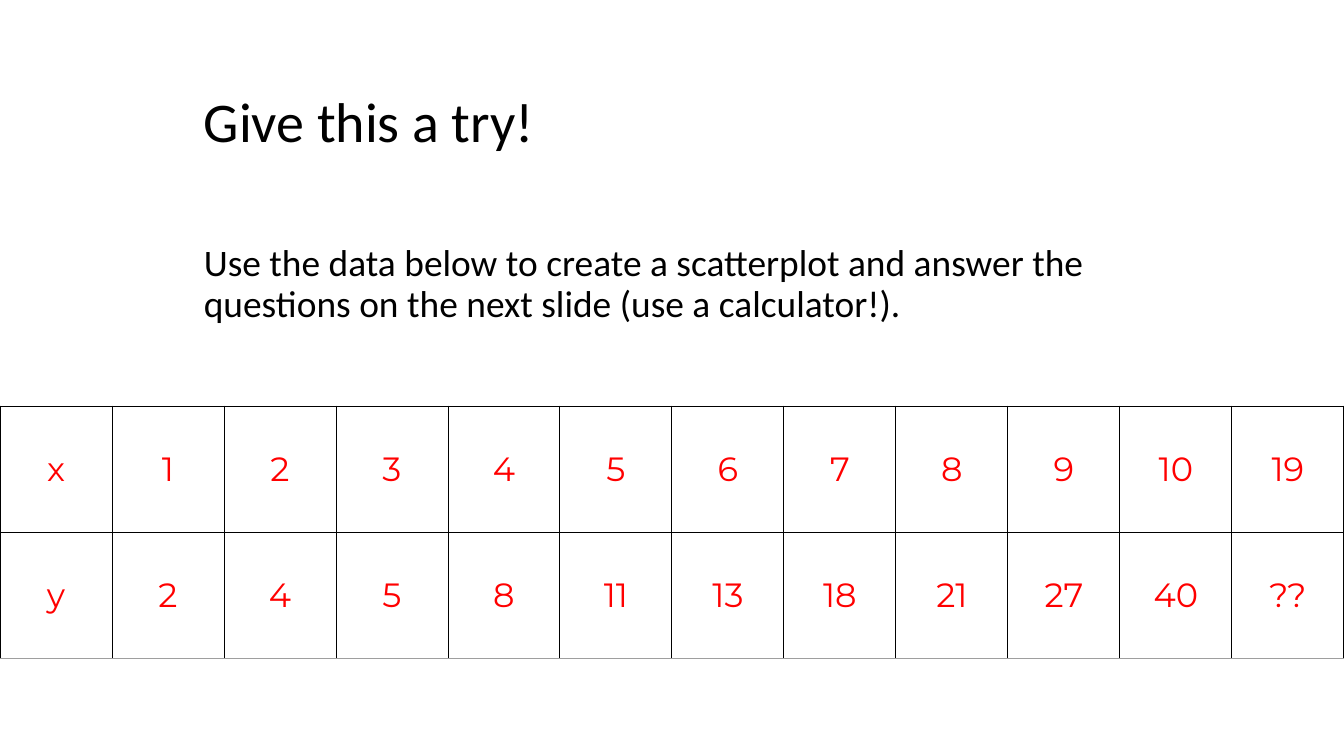
from dataclasses import dataclass

from lxml.etree import SubElement
from pptx import Presentation
from pptx.dml.color import RGBColor
from pptx.enum.text import MSO_ANCHOR as Anchor, MSO_AUTO_SIZE as Fit, PP_ALIGN as Align
from pptx.oxml.ns import qn
from pptx.table import _Cell as Cell
from pptx.text.text import TextFrame, _Paragraph as Para
from pptx.util import Pt

BLACK = RGBColor(0x00, 0x00, 0x00)
RED = RGBColor(0xFF, 0x00, 0x00)
GREY = RGBColor(0x9E, 0x9E, 0x9E)

WIDE, HIGH = 960, 540
INSET = Pt(9.6)
LINE = Pt(0.75)
TOP, ROW = 290, 90


@dataclass(frozen=True)
class Block:
    text: str
    top: float
    height: float
    size: float
    anchor: Anchor
    left: float = 136
    width: float = 739


HEAD = Block("Give this a try!", 41, 96, 40, Anchor.MIDDLE)
TASK = Block(
    "Use the data below to create a scatterplot and answer the "
    "questions on the next slide (use a calculator!).",
    165, 305, 26.7, Anchor.TOP,
)
DATA = (
    ("x", "1", "2", "3", "4", "5", "6", "7", "8", "9", "10", "19"),
    ("y", "2", "4", "5", "8", "11", "13", "18", "21", "27", "40", "??"),
)


def add_run(para: Para, text: str, face: str, size: float, color: RGBColor) -> None:
    run = para.add_run()
    run.text = text
    run.font.name = face
    run.font.size = Pt(size)
    run.font.color.rgb = color


def fill_block(frame: TextFrame, block: Block) -> None:
    frame.word_wrap = True
    frame.auto_size = Fit.NONE
    frame.vertical_anchor = block.anchor
    frame.margin_left = frame.margin_right = INSET
    frame.margin_top = frame.margin_bottom = INSET
    para = frame.paragraphs[0]
    para.alignment = Align.LEFT
    para.line_spacing = 0.9
    add_run(para, block.text, "Calibri", block.size, BLACK)


def add_edge(cell: Cell, side: str, color: RGBColor) -> None:
    props = cell._tc.get_or_add_tcPr()
    edge = SubElement(props, qn(f"a:ln{side}"), w=str(LINE))
    fill = SubElement(edge, qn("a:solidFill"))
    SubElement(fill, qn("a:srgbClr"), val=str(color))


def fill_cell(cell: Cell, text: str, last: bool) -> None:
    cell.vertical_anchor = Anchor.MIDDLE
    cell.margin_left = cell.margin_right = INSET
    cell.margin_top = cell.margin_bottom = INSET
    for side in "LRTB":
        add_edge(cell, side, GREY if last and side == "B" else BLACK)
    cell.fill.background()
    para = cell.text_frame.paragraphs[0]
    para.alignment = Align.CENTER
    add_run(para, text, "Montserrat", 24, RED)


def main() -> None:
    deck = Presentation()
    deck.slide_width, deck.slide_height = Pt(WIDE), Pt(HIGH)
    slide = deck.slides.add_slide(deck.slide_layouts[5])

    # Title
    title = slide.shapes.title
    title.left, title.top = Pt(HEAD.left), Pt(HEAD.top)
    title.width, title.height = Pt(HEAD.width), Pt(HEAD.height)
    fill_block(title.text_frame, HEAD)

    # Task text
    box = slide.shapes.add_textbox(
        Pt(TASK.left), Pt(TASK.top), Pt(TASK.width), Pt(TASK.height)
    )
    fill_block(box.text_frame, TASK)

    # Data table
    rows, cols = len(DATA), len(DATA[0])
    table = slide.shapes.add_table(
        rows, cols, Pt(0), Pt(TOP), Pt(WIDE), Pt(ROW * rows)
    ).table
    table.first_row = table.horz_banding = False
    for r, values in enumerate(DATA):
        for c, value in enumerate(values):
            fill_cell(table.cell(r, c), value, r == rows - 1)

    deck.save("out.pptx")


if __name__ == "__main__":
    main()
